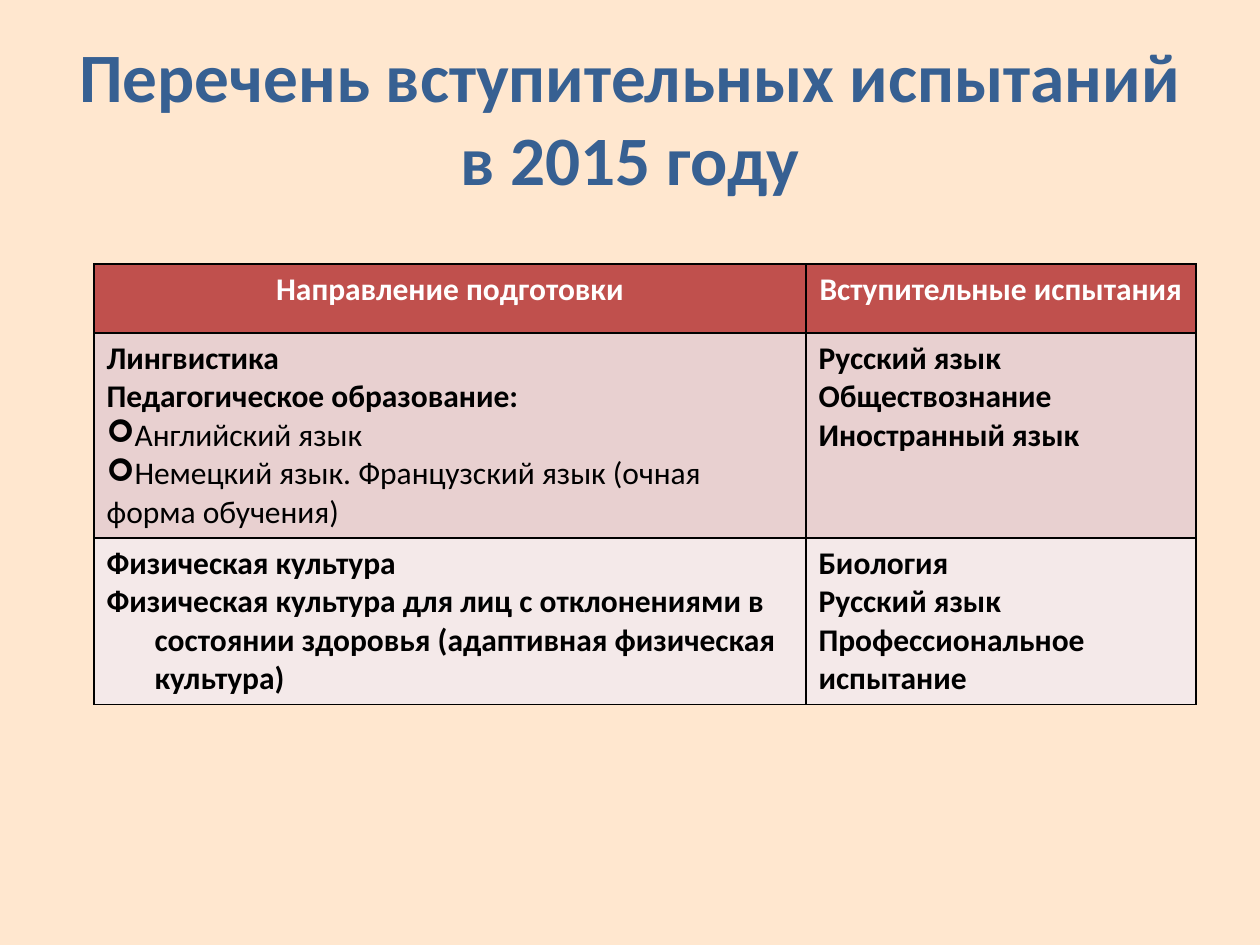
"""Build a slide listing the 2015 entrance exams by field of study."""
from lxml import etree
from pptx import Presentation
from pptx.dml.color import RGBColor
from pptx.enum.text import MSO_ANCHOR, PP_ALIGN
from pptx.oxml.ns import qn
from pptx.util import Pt

PX = 7257.6
FONT = "Calibri"
PAGE = RGBColor(0xFF, 0xE7, 0xCF)
BLUE = RGBColor(0x37, 0x60, 0x92)
RED = RGBColor(0xC0, 0x50, 0x4D)
PINK = RGBColor(0xE8, 0xD0, 0xD0)
PALE = RGBColor(0xF4, 0xE9, 0xE9)
WHITE = RGBColor(0xFF, 0xFF, 0xFF)
BLACK = RGBColor(0, 0, 0)

TITLE = "Перечень вступительных испытаний в 2015 году"
COLS = [712, 390]
ROWS = [
    (69, RED, [
        [("head", "Направление подготовки")],
        [("head", "Вступительные испытания")],
    ]),
    (205, PINK, [
        [("bold", "Лингвистика"),
         ("bold", "Педагогическое образование:"),
         ("bullet", "Английский язык"),
         ("bullet", "Немецкий язык. Французский язык (очная форма обучения)")],
        [("bold", "Русский язык"),
         ("bold", "Обществознание"),
         ("bold", "Иностранный язык")],
    ]),
    (166, PALE, [
        [("hanging", "Физическая культура"),
         ("hanging", "Физическая культура для лиц с отклонениями в состоянии "
                     "здоровья (адаптивная физическая культура)")],
        [("bold", "Биология"),
         ("bold", "Русский язык"),
         ("bold", "Профессиональное испытание")],
    ]),
]


def px(n):
    return round(n * PX)


def add_run(p, text, size, color, bold=True):
    r = p.add_run()
    r.text = text
    r.font.name = FONT
    r.font.size = Pt(size)
    r.font.bold = bold
    r.font.color.rgb = color


def set_borders(cell):
    tc_pr = cell._tc.get_or_add_tcPr()
    for i, side in enumerate(("a:lnL", "a:lnR", "a:lnT", "a:lnB")):
        ln = etree.Element(qn(side), w=str(Pt(1)))
        fill = etree.SubElement(ln, qn("a:solidFill"))
        etree.SubElement(fill, qn("a:srgbClr"), val=str(BLACK))
        tc_pr.insert(i, ln)


def add_paragraph(p, kind, text):
    p_pr = p._p.get_or_add_pPr()
    if kind == "hanging":
        p_pr.set("marL", str(px(48)))
        p_pr.set("indent", str(px(-48)))
    if kind == "bullet":
        etree.SubElement(p_pr, qn("a:buFont"), typeface="Wingdings")
        etree.SubElement(p_pr, qn("a:buChar"), char="➢")
    p.alignment = PP_ALIGN.CENTER if kind == "head" else PP_ALIGN.LEFT
    add_run(p, text, 18, WHITE if kind == "head" else BLACK, kind != "bullet")


def fill_cell(cell, color, lines):
    cell.fill.solid()
    cell.fill.fore_color.rgb = color
    set_borders(cell)
    tf = cell.text_frame
    for i, (kind, text) in enumerate(lines):
        add_paragraph(tf.add_paragraph() if i else tf.paragraphs[0], kind, text)


def main():
    prs = Presentation()
    prs.slide_width, prs.slide_height = px(1260), px(945)
    s = prs.slides.add_slide(prs.slide_layouts[5])
    s.background.fill.solid()
    s.background.fill.fore_color.rgb = PAGE

    title = s.shapes.title
    title.left, title.top, title.width, title.height = map(px, (63, 38, 1134, 157))
    title.text_frame.vertical_anchor = MSO_ANCHOR.MIDDLE
    p = title.text_frame.paragraphs[0]
    p.alignment = PP_ALIGN.CENTER
    add_run(p, TITLE, 39.6, BLUE)

    height = sum(row[0] for row in ROWS)
    table = s.shapes.add_table(len(ROWS), len(COLS), px(94), px(264),
                               px(sum(COLS)), px(height)).table
    for col, width in zip(table.columns, COLS):
        col.width = px(width)
    for row, (row_height, color, cells) in zip(table.rows, ROWS):
        row.height = px(row_height)
        for cell, lines in zip(row.cells, cells):
            fill_cell(cell, color, lines)
    prs.save("out.pptx")


if __name__ == "__main__":
    main()
